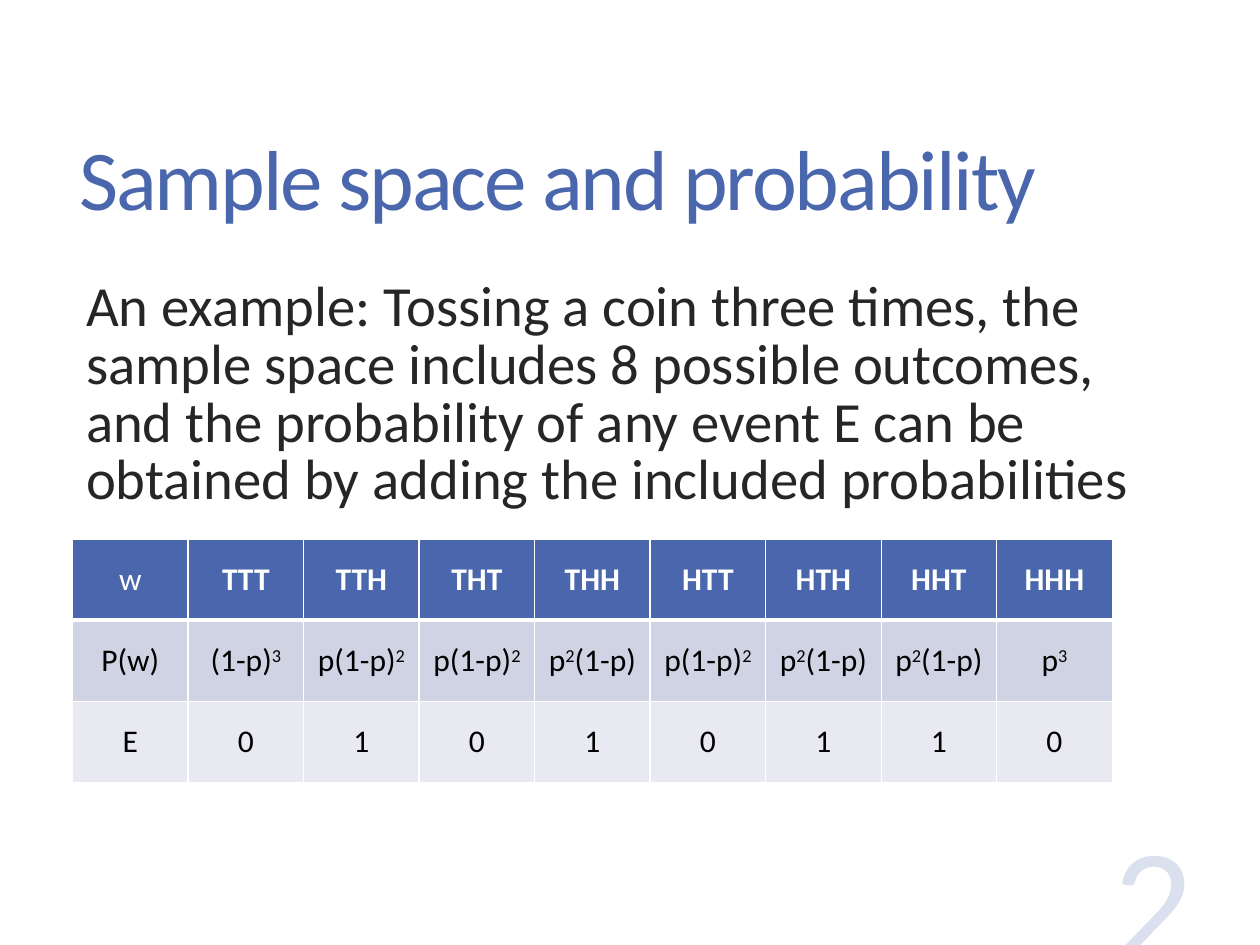
"""Build a slide on the sample space of three coin tosses."""
import dataclasses
import typing

import lxml.etree
import pptx
import pptx.dml.color
import pptx.enum.text
import pptx.oxml.ns
import pptx.util

Inches = pptx.util.Inches
Align = pptx.enum.text.PP_ALIGN
Anchor = pptx.enum.text.MSO_ANCHOR
qn = pptx.oxml.ns.qn

BLUE, WHITE, BLACK = "4A66AC", "FFFFFF", "000000"


@dataclasses.dataclass(frozen=True)
class Style:
    size: float
    color: str
    bold: bool = False
    track: int = 0
    alpha: int = 100


@dataclasses.dataclass(frozen=True)
class Label:
    text: str
    box: tuple[float, float, float, float]
    style: Style
    anchor: typing.Any = Anchor.TOP
    align: typing.Any = Align.LEFT
    lines: float = 1.0
    before: float = 0
    indent: float = 0


@dataclasses.dataclass(frozen=True)
class Row:
    cells: list[str]
    fill: str
    color: str
    bold: bool = False
    rule: float = 1


LABELS = [
    Label("Sample space and probability", (0.6, 0.61, 9.82, 2.01),
          Style(54, BLUE, track=-130), Anchor.MIDDLE, lines=0.9),
    Label("An example: Tossing a coin three times, the sample space includes "
          "8 possible outcomes, and the probability of any event E can be "
          "obtained by adding the included probabilities",
          (0.62, 2.42, 9.69, 5.08), Style(36, "262626"),
          lines=0.85, before=14.4, indent=0.04),
    Label("2", (7.95, 7.08, 2.67, 1.7), Style(100, BLUE, alpha=20),
          Anchor.BOTTOM, Align.RIGHT),
]

ROWS = [
    Row(["w", "TTT", "TTH", "THT", "THH", "HTT", "HTH", "HHT", "HHH"],
        BLUE, WHITE, True, 3),
    Row(["P(w)", "(1-p)|3", "p(1-p)|2", "p(1-p)|2", "p|2|(1-p)",
         "p(1-p)|2", "p|2|(1-p)", "p|2|(1-p)", "p|3"], "D0D3E3", BLACK),
    Row(["E", *"01010110"], "E9EAF1", BLACK),
]


def paint(fill: typing.Any, color: str) -> None:
    """Give a fill one solid colour."""
    fill.solid()
    fill.fore_color.rgb = pptx.dml.color.RGBColor.from_string(color)


def add_run(para: typing.Any, text: str, style: Style, sup: bool = False) -> None:
    """Add one styled run to a paragraph."""
    run = para.add_run()
    run.text = text
    run.font.name = "Calibri"
    run.font.size = pptx.util.Pt(style.size)
    run.font.bold = style.bold
    paint(run.font.fill, style.color)
    props = run._r.get_or_add_rPr()
    if style.track:
        props.set("spc", str(style.track))
    if sup:
        props.set("baseline", "30000")
    if style.alpha < 100:
        tone = props.find(".//" + qn("a:srgbClr"))
        lxml.etree.SubElement(tone, qn("a:alpha"), val=str(style.alpha * 1000))


def add_label(slide: typing.Any, label: Label) -> None:
    """Draw one text box."""
    frame = slide.shapes.add_textbox(*map(Inches, label.box)).text_frame
    frame.word_wrap = True
    frame.vertical_anchor = label.anchor
    para = frame.paragraphs[0]
    para.alignment = label.align
    para.line_spacing = label.lines
    para.space_before = pptx.util.Pt(label.before)
    if label.indent:
        props = para._p.get_or_add_pPr()
        props.set("marL", str(Inches(label.indent)))
        props.set("indent", "0")
    add_run(para, label.text, label.style)


def add_edge(cell: typing.Any, side: str, width: float) -> None:
    """Draw one white border of a cell."""
    edge = lxml.etree.SubElement(cell._tc.get_or_add_tcPr(), qn("a:ln" + side),
                                 w=str(pptx.util.Pt(width)))
    fill = lxml.etree.SubElement(edge, qn("a:solidFill"))
    lxml.etree.SubElement(fill, qn("a:srgbClr"), val=WHITE)


def fill_cell(cell: typing.Any, text: str, row: Row, top: float) -> None:
    """Style one cell, with every second part of its text raised."""
    for side, width in zip("LRTB", (1, 1, top, row.rule)):
        add_edge(cell, side, width)
    paint(cell.fill, row.fill)
    cell.vertical_anchor = Anchor.MIDDLE
    para = cell.text_frame.paragraphs[0]
    para.alignment = Align.CENTER
    style = Style(20, row.color, row.bold and text != "w")
    for index, part in enumerate(text.split("|")):
        add_run(para, part, style, index % 2 == 1)


def add_grid(slide: typing.Any, rows: list[Row]) -> None:
    """Draw the table of outcomes."""
    box = map(Inches, (0.64, 4.75, 9.17, 2.15))
    table = slide.shapes.add_table(len(rows), len(rows[0].cells), *box).table
    top = 1
    for index, row in enumerate(rows):
        for col, text in enumerate(row.cells):
            fill_cell(table.cell(index, col), text, row, top)
        top = row.rule


def main() -> None:
    """Build and save the slide."""
    deck = pptx.Presentation()
    deck.slide_width, deck.slide_height = Inches(11.11), Inches(8.33)
    slide = deck.slides.add_slide(deck.slide_layouts[6])
    for label in LABELS:
        add_label(slide, label)
    add_grid(slide, ROWS)
    deck.save("out.pptx")


if __name__ == "__main__":
    main()
